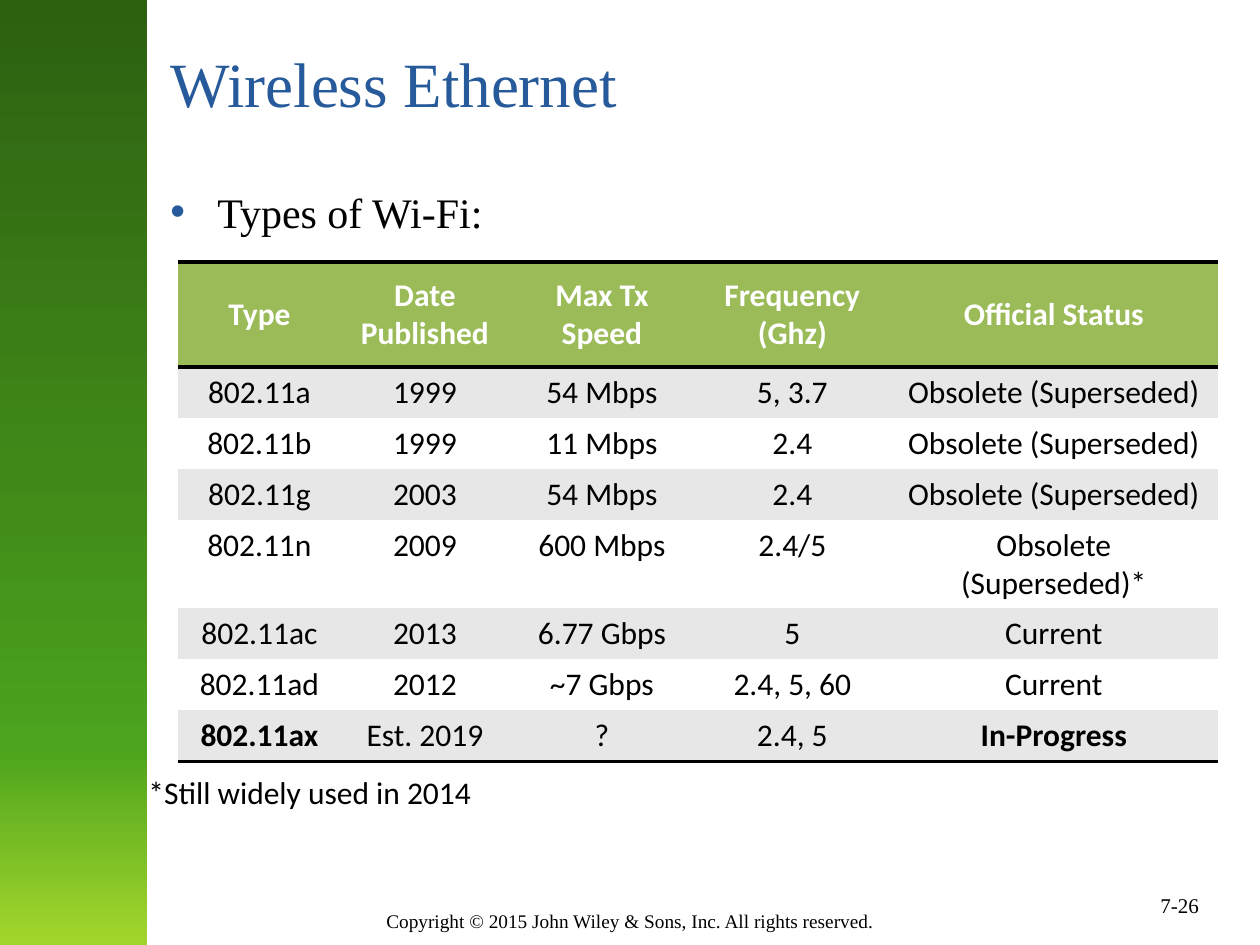
from dataclasses import dataclass

from lxml.etree import SubElement
from pptx import Presentation
from pptx.dml.color import RGBColor
from pptx.enum.shapes import MSO_SHAPE as Shape
from pptx.enum.text import MSO_ANCHOR as Anchor, MSO_AUTO_SIZE as AutoSize, PP_ALIGN as Align
from pptx.oxml.ns import qn
from pptx.util import Pt

EMU_PER_PX = 914400 / 126
NO_GRID_STYLE = "{2D5ABB26-0587-4C30-8999-92F81FD0307C}"


@dataclass(frozen=True)
class Theme:
    serif: str = "Times New Roman"
    sans: str = "Calibri"
    black: str = "000000"
    white: str = "FFFFFF"
    blue: str = "265A9A"
    header: str = "9BBB59"
    band: str = "E7E7E7"
    sidebar: tuple = ((0, "2D6011"), (50, "408919"), (79, "4CA31D"), (99, "A0D42C"))
    title_size: int = 36
    body_size: int = 24
    table_size: int = 18
    number_size: int = 12
    footer_size: int = 11


def px(length):
    return round(length * EMU_PER_PX)


def add_color(parent, value):
    SubElement(parent, qn("a:srgbClr"), val=value)


class SlideBuilder:
    def __init__(self, page, theme):
        self.page = page
        self.theme = theme

    def add_span(self, para, text, size, font, color, align=Align.LEFT, bold=False):
        para.alignment = align
        span = para.add_run()
        span.text = text
        formats = {"size": Pt(size), "name": font, "bold": bold}
        for name, value in formats.items():
            setattr(span.font, name, value)
        span.font.color.rgb = RGBColor.from_string(color)

    def text(self, area, text, size, font, color=None, align=Align.LEFT, wrap=True, grow=False):
        box = self.page.shapes.add_textbox(*map(px, area))
        formats = {
            "word_wrap": wrap,
            "auto_size": AutoSize.SHAPE_TO_FIT_TEXT if grow else AutoSize.NONE,
            "vertical_anchor": Anchor.TOP,
        }
        for name, value in formats.items():
            setattr(box.text_frame, name, value)
        para = box.text_frame.paragraphs[0]
        self.add_span(para, text, size, font, color or self.theme.black, align)
        return para

    def bullet(self, area, text, indent):
        theme = self.theme
        para = self.text(area, text, theme.body_size, theme.serif)
        props = para._p.get_or_add_pPr()
        props.set("marL", str(px(indent)))
        props.set("indent", str(-px(indent)))
        add_color(SubElement(props, qn("a:buClr")), theme.blue)
        SubElement(props, qn("a:buFont"), typeface="Arial")
        SubElement(props, qn("a:buChar"), char="•")

    def gradient_bar(self, area, stops):
        """Add a rectangle shaded from top to bottom."""
        bar = self.page.shapes.add_shape(Shape.RECTANGLE, *map(px, area))
        bar.shadow.inherit = False
        bar.line.fill.background()
        bar.fill.gradient()
        bar.fill.gradient_angle = 270
        stop_list = bar.element.spPr.find(".//" + qn("a:gsLst"))
        stop_list.clear()
        for percent, color in stops:
            add_color(SubElement(stop_list, qn("a:gs"), pos=str(percent * 1000)), color)

    def rule(self, cell, sides):
        """Draw 2 pt black lines on the given sides (T, B) of a cell."""
        for side in sides:
            line = SubElement(cell._tc.get_or_add_tcPr(), qn("a:ln" + side), w=str(Pt(2)))
            add_color(SubElement(line, qn("a:solidFill")), self.theme.black)

    def table(self, left, top, widths, heights, rows, bold_cells):
        theme = self.theme
        frame = self.page.shapes.add_table(
            len(rows), len(widths), *map(px, (left, top, sum(widths), sum(heights))))
        table = frame.table
        table.horz_banding = False
        table._tbl.tblPr.find(qn("a:tableStyleId")).text = NO_GRID_STYLE
        for column, width in zip(table.columns, widths):
            column.width = px(width)
        for row, height in zip(table.rows, heights):
            row.height = px(height)
        last = len(rows) - 1
        for r, values in enumerate(rows):
            is_header = r == 0
            fill = theme.header if is_header else theme.band if r % 2 else theme.white
            for c, value in enumerate(values):
                cell = table.cell(r, c)
                cell.vertical_anchor = Anchor.MIDDLE if is_header else Anchor.TOP
                self.rule(cell, "TB" if is_header else "B" if r == last else "")
                cell.fill.solid()
                cell.fill.fore_color.rgb = RGBColor.from_string(fill)
                self.add_span(cell.text_frame.paragraphs[0], value, theme.table_size, theme.sans,
                              theme.white if is_header else theme.black, Align.CENTER,
                              is_header or value in bold_cells)


WIFI_TYPES = [
    ("Type", "Date Published", "Max Tx Speed", "Frequency (Ghz)", "Official Status"),
    ("802.11a", "1999", "54 Mbps", "5, 3.7", "Obsolete (Superseded)"),
    ("802.11b", "1999", "11 Mbps", "2.4", "Obsolete (Superseded)"),
    ("802.11g", "2003", "54 Mbps", "2.4", "Obsolete (Superseded)"),
    ("802.11n", "2009", "600 Mbps", "2.4/5", "Obsolete (Superseded)*"),
    ("802.11ac", "2013", "6.77 Gbps", "5", "Current"),
    ("802.11ad", "2012", "~7 Gbps", "2.4, 5, 60", "Current"),
    ("802.11ax", "Est. 2019", "?", "2.4, 5", "In-Progress"),
]


def main():
    deck = Presentation()
    deck.slide_width, deck.slide_height = px(1260), px(945)
    theme = Theme()
    slide = SlideBuilder(deck.slides.add_slide(deck.slide_layouts[6]), theme)

    slide.text((0, 903, 1260, 37), "Copyright © 2015 John Wiley & Sons, Inc. All rights reserved.",
               theme.footer_size, theme.serif, align=Align.CENTER, grow=True)
    slide.text((1148, 886, 68, 38), "7-26", theme.number_size, theme.serif, wrap=False, grow=True)
    slide.gradient_bar((-3, 0, 150, 945), theme.sidebar)
    slide.text((158, 38, 1061, 158), "Wireless Ethernet", theme.title_size, theme.serif, theme.blue)
    slide.bullet((158, 180, 1032, 631), "Types of Wi-Fi:", indent=47)
    body_heights = [51] * (len(WIFI_TYPES) - 1)
    slide.table(178, 262, (163, 168, 186, 195, 328), [105, *body_heights], WIFI_TYPES,
                bold_cells={"802.11ax", "In-Progress"})
    slide.text((136, 767, 359, 50), "*Still widely used in 2014",
               theme.table_size, theme.sans, wrap=False, grow=True)
    deck.save("out.pptx")


if __name__ == "__main__":
    main()
